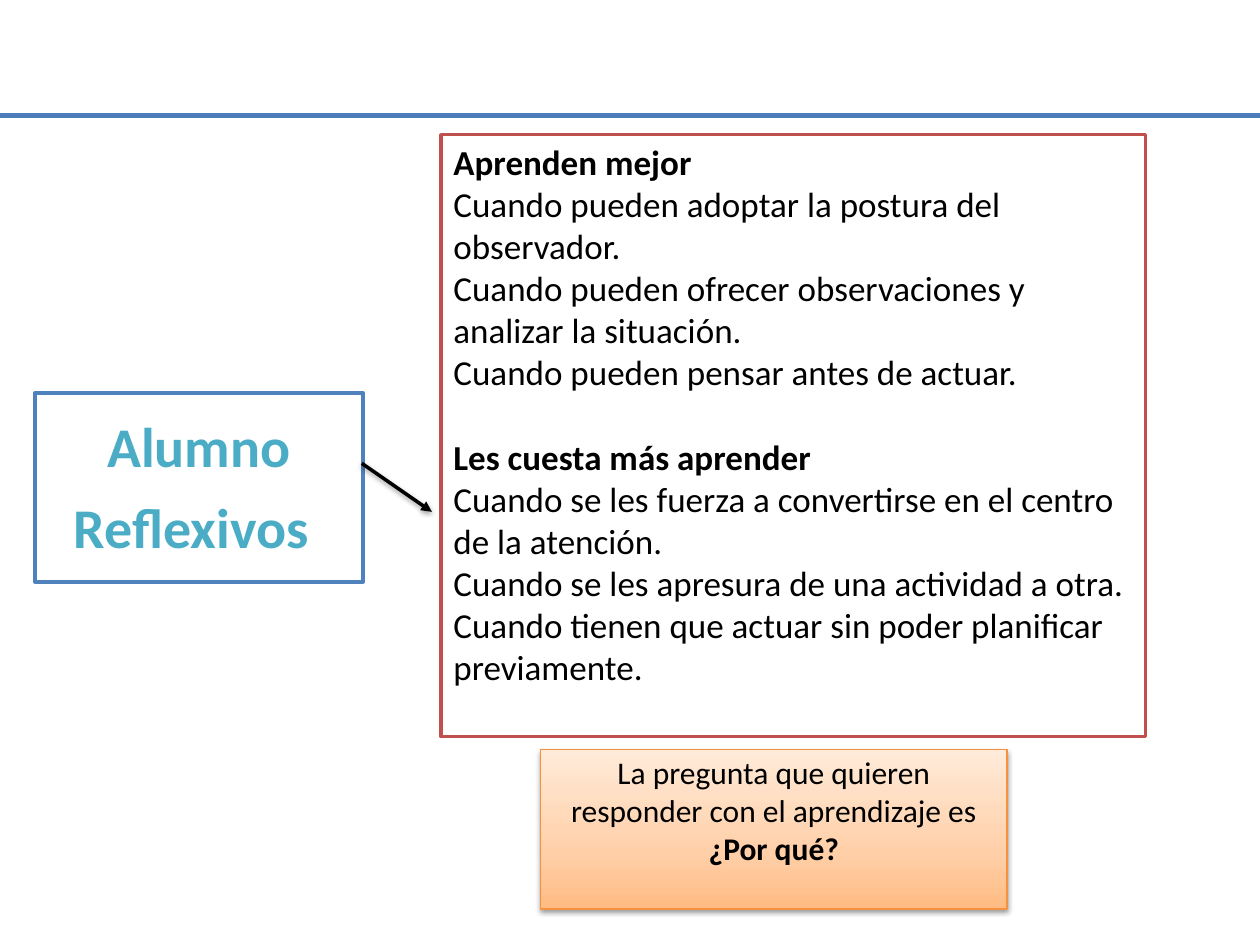
from copy import deepcopy
from dataclasses import dataclass

from lxml import etree
from pptx import Presentation
from pptx.dml.color import RGBColor
from pptx.enum.shapes import MSO_CONNECTOR, MSO_SHAPE
from pptx.enum.text import MSO_ANCHOR, MSO_AUTO_SIZE, PP_ALIGN
from pptx.oxml.ns import qn
from pptx.util import Pt

RECTANGLE = MSO_SHAPE.RECTANGLE
STRAIGHT = MSO_CONNECTOR.STRAIGHT
TOP, MIDDLE = MSO_ANCHOR.TOP, MSO_ANCHOR.MIDDLE
LEFT, CENTER = PP_ALIGN.LEFT, PP_ALIGN.CENTER

WHITE = RGBColor(0xFF, 0xFF, 0xFF)
BLACK = RGBColor(0x00, 0x00, 0x00)
RULE_BLUE = RGBColor(0x4A, 0x7D, 0xBA)
BORDER_BLUE = RGBColor(0x4F, 0x81, 0xBD)
TITLE_TEAL = RGBColor(0x4B, 0xAC, 0xC6)
BORDER_RED = RGBColor(0xC0, 0x50, 0x4D)
BORDER_ORANGE = RGBColor(0xF5, 0x91, 0x3F)
ORANGE_STOPS = (
    (0, RGBColor(0xFF, 0xBB, 0x82)),
    (0.35, RGBColor(0xFF, 0xCF, 0xA8)),
    (1, RGBColor(0xFF, 0xEB, 0xD9)),
)
FONT_NAME = "Calibri"


@dataclass
class Run:
    text: str
    size: float
    bold: bool = False
    color: RGBColor = BLACK


@dataclass
class Paragraph:
    runs: list[Run]
    space_before: float = 0


@dataclass
class Box:
    left: float
    top: float
    width: float
    height: float
    border: RGBColor
    border_width: float
    paragraphs: list[Paragraph]
    alignment: PP_ALIGN = CENTER
    anchor: MSO_ANCHOR = MIDDLE
    bottom_margin: float = 3.6


@dataclass
class Line:
    start: tuple[float, float]
    end: tuple[float, float]
    color: RGBColor
    width: float


TITLE = Box(20, 224.5, 187.5, 108, BORDER_BLUE, 2, [
    Paragraph([Run("Alumno", 32, True, TITLE_TEAL)]),
    Paragraph([Run("Reflexivos", 32, True, TITLE_TEAL), Run(" ", 40, True, TITLE_TEAL)]),
])
LEARNING = Box(252, 77, 402.5, 344, BORDER_RED, 2, [
    Paragraph([Run("Aprenden mejor", 20, True)]),
    Paragraph([Run("Cuando pueden adoptar la postura del observador.", 20)]),
    Paragraph([Run("Cuando pueden ofrecer observaciones y analizar la situación.", 20)]),
    Paragraph([Run("Cuando pueden pensar antes de actuar.", 20)]),
    Paragraph([Run("Les cuesta más aprender", 20, True)], space_before=24),
    Paragraph([Run("Cuando se les fuerza a convertirse en el centro de la atención.", 20)]),
    Paragraph([Run("Cuando se les apresura de una actividad a otra.", 20)]),
    Paragraph([Run("Cuando tienen que actuar sin poder planificar previamente.", 20)]),
], alignment=LEFT, anchor=TOP)
QUESTION = Box(309, 428.5, 266.5, 91, BORDER_ORANGE, 0.75, [
    Paragraph([
        Run("La pregunta que quieren responder con el aprendizaje es ", 18),
        Run("¿Por qué?", 18, True),
    ]),
], bottom_margin=25.6)
HEADER_RULE = Line((0, 66), (720, 66), RULE_BLUE, 3)
ARROW = Line((206.8, 264.8), (246.8, 292.5), BLACK, 2)


def set_all(target, values: dict) -> None:
    for name, value in values.items():
        setattr(target, name, value)


def write_paragraphs(text_frame, box: Box) -> None:
    for index, content in enumerate(box.paragraphs):
        paragraph = text_frame.add_paragraph() if index else text_frame.paragraphs[0]
        set_all(paragraph, {
            "alignment": box.alignment,
            "space_before": Pt(content.space_before),
            "space_after": Pt(0),
            "line_spacing": 1.0,
        })
        for part in content.runs:
            run = paragraph.add_run()
            run.text = part.text
            set_all(run.font, {"name": FONT_NAME, "size": Pt(part.size), "bold": part.bold})
            run.font.color.rgb = part.color


def format_box(shape, box: Box) -> None:
    set_all(shape, {
        name: Pt(getattr(box, name)) for name in ("left", "top", "width", "height")
    })
    shape.fill.solid()
    shape.fill.fore_color.rgb = WHITE
    shape.line.color.rgb = box.border
    shape.line.width = Pt(box.border_width)
    shape.shadow.inherit = False
    set_all(shape.text_frame, {
        "word_wrap": True,
        "auto_size": MSO_AUTO_SIZE.NONE,
        "vertical_anchor": box.anchor,
        "margin_left": Pt(7.2),
        "margin_right": Pt(7.2),
        "margin_top": Pt(3.6),
        "margin_bottom": Pt(box.bottom_margin),
    })
    write_paragraphs(shape.text_frame, box)


def add_box(slide, box: Box):
    shape = slide.shapes.add_shape(RECTANGLE, 0, 0, 0, 0)
    format_box(shape, box)
    return shape


def fill_gradient(shape, stops) -> None:
    """Fill upwards from the first stop to the last."""
    shape.fill.gradient()
    shape.fill.gradient_angle = 90
    stop_list = shape._element.spPr.find(".//" + qn("a:gsLst"))
    while len(stop_list) < len(stops):
        stop_list.append(deepcopy(stop_list[0]))
    for stop, (position, color) in zip(shape.fill.gradient_stops, stops):
        stop.position = position
        stop.color.rgb = color


def add_line(slide, line: Line):
    points = [Pt(value) for value in (*line.start, *line.end)]
    connector = slide.shapes.add_connector(STRAIGHT, *points)
    connector.line.color.rgb = line.color
    connector.line.width = Pt(line.width)
    etree.SubElement(connector._element.spPr, qn("a:effectLst"))
    return connector


def add_soft_shadow(shape) -> None:
    effects = shape._element.spPr.find(qn("a:effectLst"))
    shadow = etree.SubElement(
        effects, qn("a:outerShdw"), blurRad=str(Pt(3.1)), dist=str(Pt(1.6)),
        dir="5400000", rotWithShape="0",
    )
    color = etree.SubElement(shadow, qn("a:srgbClr"), val=str(BLACK))
    etree.SubElement(color, qn("a:alpha"), val="38000")


def add_arrowhead(connector) -> None:
    outline = connector._element.spPr.find(qn("a:ln"))
    etree.SubElement(outline, qn("a:tailEnd"), type="triangle")


def main() -> None:
    presentation = Presentation()
    presentation.slide_width, presentation.slide_height = Pt(720), Pt(540)
    title_only = presentation.slide_layouts[5]
    slide = presentation.slides.add_slide(title_only)

    add_line(slide, HEADER_RULE)
    format_box(slide.shapes.title, TITLE)
    add_box(slide, LEARNING)
    question = add_box(slide, QUESTION)
    fill_gradient(question, ORANGE_STOPS)
    add_soft_shadow(question)
    arrow = add_line(slide, ARROW)
    add_arrowhead(arrow)
    add_soft_shadow(arrow)

    presentation.save("out.pptx")


if __name__ == "__main__":
    main()
